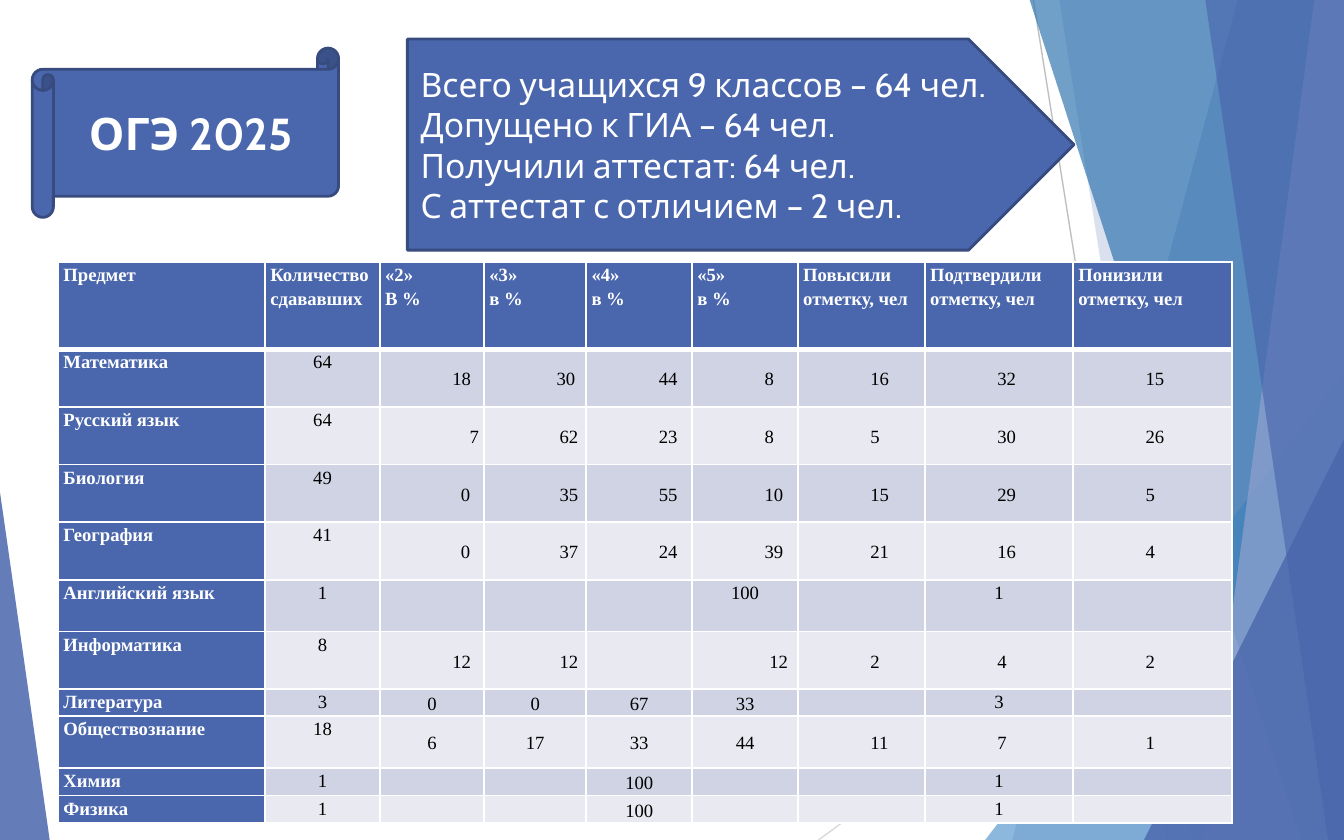
from lxml import etree
from pptx import Presentation
from pptx import util as u
from pptx.dml.color import RGBColor
from pptx.enum import shapes, text
from pptx.oxml import ns

COLOURS = {
    "blue": "4A66AC", "outline": "374B7F", "white": "FFFFFF", "black": "000000",
    "sky": "629DD1", "sea": "3477B2", "lilac": "90A2CF",
    "grey": "BFBFBF", "pale_grey": "D9D9D9", "odd_row": "D0D3E3", "even_row": "E9EAF1",
}
WIDTH, HEIGHT = 25.4, 15.88
HEADING = ["ОГЭ 2025"]
SUMMARY = [
    "Всего учащихся 9 классов – 64 чел.",
    "Допущено к ГИА – 64 чел.",
    "Получили аттестат: 64 чел.",
    "С аттестат с отличием – 2 чел.",
]
COLUMNS = [
    (["Предмет"], 3.91), (["Количество", "сдававших"], 2.17),
    (["«2»", "В %"], 1.97), (["«3»", "в %"], 1.93),
    (["«4»", "в %"], 2), (["«5»", "в %"], 2),
    (["Повысили", "отметку, чел"], 2.4), (["Подтвердили", "отметку, чел"], 2.8),
    (["Понизили", "отметку, чел"], 3),
]
HEADER_HEIGHT = 1.65
SUBJECTS = [
    ("Математика", 1.09, [64, 18, 30, 44, 8, 16, 32, 15], "clljllll"),
    ("Русский язык", 1.09, [64, 7, 62, 23, 8, 5, 30, 26], "crijllll"),
    ("Биология", 1.09, [49, 0, 35, 55, 10, 15, 29, 5], "ciijllll"),
    ("География", 1.09, [41, 0, 37, 24, 39, 21, 16, 4], "ciijllll"),
    ("Английский язык", 0.98, [1, "", "", "", 100, "", 1, ""], "c...c.c."),
    ("Информатика", 1.09, [8, 12, 12, "", 12, 2, 4, 2], "cli.illl"),
    ("Литература", 0.51, [3, 0, 0, 67, 33, "", 3, ""], "chhhh.c."),
    ("Обществознание", 0.98, [18, 6, 17, 33, 44, 11, 7, 1], "chhhhlll"),
    ("Химия", 0.52, [1, "", "", 100, "", "", 1, ""], "c..h..c."),
    ("Физика", 0.52, [1, "", "", 100, "", "", 1, ""], "c..h..c."),
]
ALIGN, ANCHOR = text.PP_ALIGN, text.MSO_ANCHOR
CELL_STYLES = {
    ".": (ALIGN.LEFT, ANCHOR.TOP, 0, 0),
    "c": (ALIGN.CENTER, ANCHOR.TOP, 0, 0),
    "l": (ALIGN.LEFT, ANCHOR.MIDDLE, 1.27, 0),
    "j": (ALIGN.JUSTIFY, ANCHOR.MIDDLE, 1.27, 0),
    "r": (ALIGN.RIGHT, ANCHOR.MIDDLE, 1.27, 0),
    "i": (ALIGN.CENTER, ANCHOR.MIDDLE, 1.27, 0),
    "h": (ALIGN.CENTER, ANCHOR.MIDDLE, 1.24, -1.24),
}
RAYS = [
    ((19.53, 0), (22.07, HEIGHT), "grey"),
    ((WIDTH, 8.53), (15.47, HEIGHT), "pale_grey"),
]
FACETS = [
    ("band", (23.39, 19.13), "blue", 30),
    ("band", (20.02, 22.53), "blue", 20),
    ("triangle", (18.62, 7.06, 6.78, 8.82, 1), "sky", 72),
    ("band", (19.46, 24.59), "sea", 70),
    ("band", (24.84, 22.71), "lilac", 70),
    ("band", (22.78, 25.1), "blue", 65),
    ("triangle", (21.62, 8.31, 3.78, 7.57, 1), "blue", 80),
    ("triangle", (0, 9.3, 0.94, 6.58, 0), "blue", 85),
]


def assign(target, values):
    for name, value in values.items():
        setattr(target, name, value)


def rgb(colour):
    return RGBColor.from_string(COLOURS[colour])


def child(parent, tag, **attributes):
    return etree.SubElement(parent, ns.qn(tag), attributes)


def paint(fill, colour, alpha=100):
    fill.solid()
    fill.fore_color.rgb = rgb(colour)
    if alpha < 100:
        tint = next(fill._xPr.iter(ns.qn("a:srgbClr")))
        child(tint, "a:alpha", val=str(alpha * 1000))


def write(frame, lines, font, paragraph_format):
    for index, line in enumerate(lines):
        paragraph = frame.add_paragraph() if index else frame.paragraphs[0]
        assign(paragraph, paragraph_format)
        run = paragraph.add_run()
        run.text = line
        assign(run.font, {key: value for key, value in font.items() if key != "colour"})
        run.font.color.rgb = rgb(font["colour"])


def add_ray(slide, start, end, colour):
    ray = slide.shapes.add_connector(
        shapes.MSO_CONNECTOR.STRAIGHT, *(u.Cm(value) for value in start + end))
    ray.line.color.rgb = rgb(colour)
    ray.line.width = u.Pt(0.75)
    child(ray._element.spPr, "a:effectLst")


def add_facet(slide, kind, geometry, colour, alpha):
    if kind == "band":
        top, bottom = geometry
        corners = [(WIDTH, 0), (WIDTH, HEIGHT), (bottom, HEIGHT)]
        builder = slide.shapes.build_freeform(u.Cm(top), 0)
        builder.add_line_segments([(u.Cm(x), u.Cm(y)) for x, y in corners])
        facet = builder.convert_to_shape()
    else:
        *box, apex = geometry
        facet = slide.shapes.add_shape(
            shapes.MSO_SHAPE.ISOSCELES_TRIANGLE, *(u.Cm(value) for value in box))
        facet.adjustments[0] = apex
    facet.shadow.inherit = False
    paint(facet.fill, colour, alpha)
    facet.line.fill.background()


def add_banner(slide, kind, box, lines, size, bold, alignment):
    banner = slide.shapes.add_shape(kind, *(u.Cm(value) for value in box))
    banner.shadow.inherit = False
    paint(banner.fill, "blue")
    banner.line.color.rgb = rgb("outline")
    banner.line.width = u.Pt(1.5)
    assign(banner.text_frame, {"word_wrap": True, "vertical_anchor": ANCHOR.MIDDLE})
    font = {"name": "Cabin", "size": u.Pt(size), "bold": bold, "colour": "white"}
    write(banner.text_frame, lines, font, {"alignment": alignment})


def fill_cell(cell, lines, style, background, is_label, bottom_width=1):
    alignment, anchor, margin, indent = CELL_STYLES[style]
    assign(cell, {
        "margin_left": u.Cm(0.1), "margin_right": u.Cm(0.1),
        "margin_top": 0, "margin_bottom": 0, "vertical_anchor": anchor,
    })
    for side in "LRTB":
        width = u.Pt(bottom_width if side == "B" else 1)
        border = child(cell._tc.get_or_add_tcPr(), f"a:ln{side}", w=str(width))
        child(child(border, "a:solidFill"), "a:srgbClr", val=COLOURS["white"])
    paint(cell.fill, background)
    if not any(lines):
        child(cell.text_frame.paragraphs[0]._p, "a:endParaRPr", sz="1000")
        return
    font = {"name": "Times New Roman", "size": u.Pt(10), "bold": is_label,
            "colour": "white" if is_label else "black"}
    write(cell.text_frame, lines, font, {"alignment": alignment, "line_spacing": 1.15})
    for paragraph in cell.text_frame.paragraphs:
        properties = paragraph._p.get_or_add_pPr()
        properties.set("marL", str(u.Cm(margin)))
        properties.set("indent", str(u.Cm(indent)))


def add_results(slide, left, top):
    widths = [width for _, width in COLUMNS]
    heights = [HEADER_HEIGHT] + [height for _, height, _, _ in SUBJECTS]
    results = slide.shapes.add_table(
        len(heights), len(widths), u.Cm(left), u.Cm(top),
        u.Cm(sum(widths)), u.Cm(sum(heights))).table
    for column, width in zip(results.columns, widths):
        column.width = u.Cm(width)
    for row, height in zip(results.rows, heights):
        row.height = u.Cm(height)
    for index, (lines, _) in enumerate(COLUMNS):
        fill_cell(results.cell(0, index), lines, ".", "blue", True, 3)
    for row, (subject, _, values, styles) in enumerate(SUBJECTS, 1):
        fill_cell(results.cell(row, 0), [subject], ".", "blue", True)
        background = "odd_row" if row % 2 else "even_row"
        for column, (value, style) in enumerate(zip(values, styles), 1):
            fill_cell(results.cell(row, column), [str(value)], style, background, False)


def main():
    deck = Presentation()
    assign(deck, {"slide_width": u.Cm(WIDTH), "slide_height": u.Cm(HEIGHT)})
    slide = deck.slides.add_slide(deck.slide_layouts[6])
    for ray in RAYS:
        add_ray(slide, *ray)
    for facet in FACETS:
        add_facet(slide, *facet)
    add_banner(slide, shapes.MSO_SHAPE.HORIZONTAL_SCROLL, (0.61, 0.91, 5.79, 3.2),
               HEADING, 24, True, ALIGN.CENTER)
    add_banner(slide, shapes.MSO_SHAPE.PENTAGON, (7.7, 0.74, 12.6, 3.99),
               SUMMARY, 18, False, ALIGN.LEFT)
    add_results(slide, 1.1, 4.95)
    deck.save("out.pptx")


if __name__ == "__main__":
    main()
